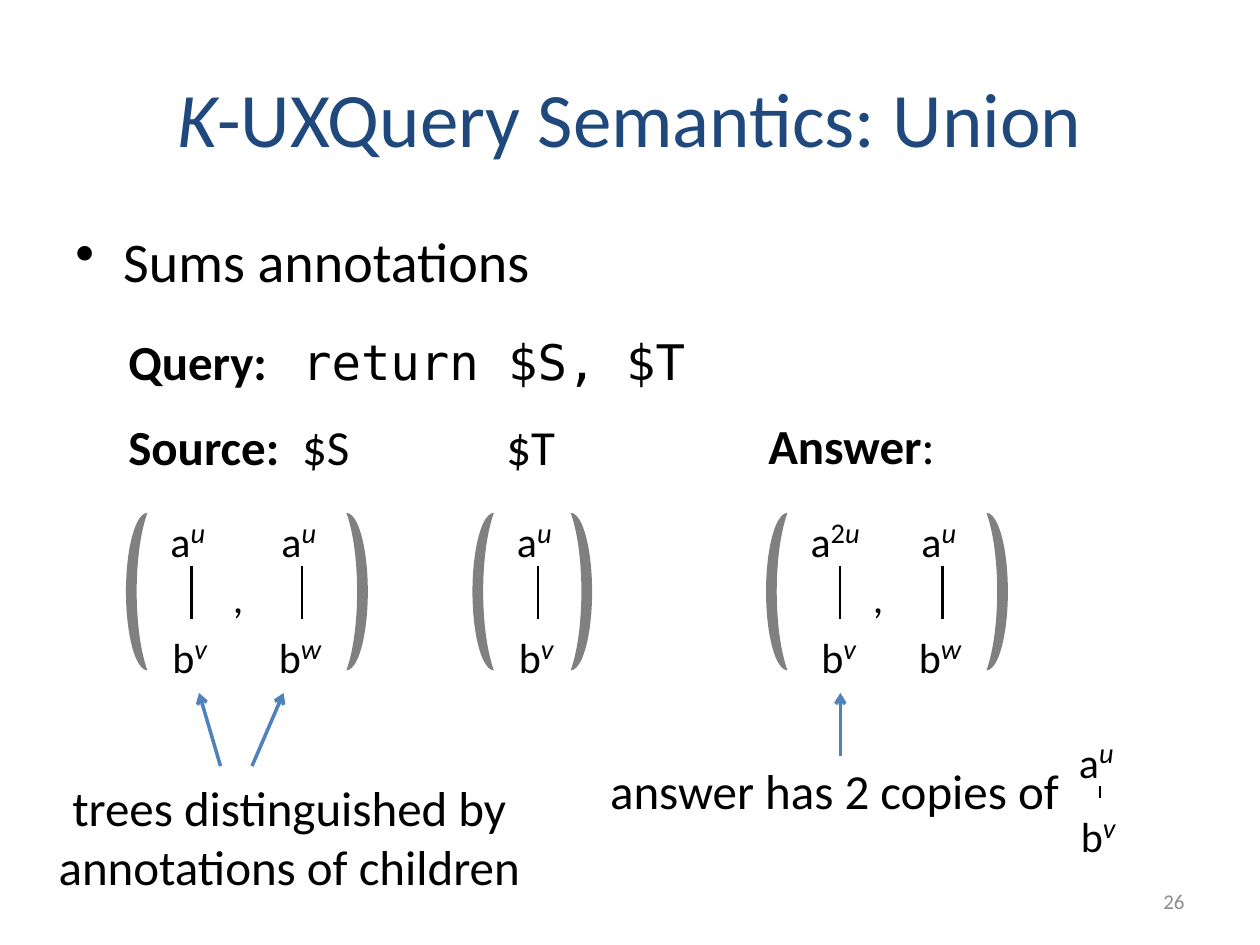
import pptx
import pptx.dml.color
import pptx.enum.shapes
import pptx.enum.text
import pptx.oxml
import pptx.util
from pptx.oxml.ns import qn
from pptx.util import Inches, Pt

RGBColor = pptx.dml.color.RGBColor
ALIGN = pptx.enum.text.PP_ALIGN
ANCHOR = pptx.enum.text.MSO_ANCHOR
SHAPE = pptx.enum.shapes.MSO_SHAPE
STRAIGHT = pptx.enum.shapes.MSO_CONNECTOR.STRAIGHT

BLACK = RGBColor(0x00, 0x00, 0x00)
NAVY = RGBColor(0x1F, 0x49, 0x7D)
BLUE = RGBColor(0x4F, 0x81, 0xBD)
GRAY = RGBColor(0x80, 0x80, 0x80)
PALE = RGBColor(0x8C, 0x8C, 0x8C)
SANS, MONO = "Calibri", "DejaVu Sans Mono"
ITALIC, BOLD = {"italic": True}, {"bold": True}

# Content: position, spans of (text, font settings), paragraph settings
TITLE = ((0.5, 0.3, 9, 1.25), [("K", ITALIC), ("-UXQuery Semantics: Union", {})],
         dict(size=44, color=NAVY, align=ALIGN.CENTER, anchor=ANCHOR.MIDDLE))
BULLET = ((0.5, 1.75, 9, 4.95), [("Sums annotations", {})], dict(size=32))
TEXTS = [
    ((7.17, 6.95, 2.33, 0.4), [("26", {})],
     dict(size=12, color=PALE, align=ALIGN.RIGHT, anchor=ANCHOR.MIDDLE)),
    ((6, 3.25, 1.67, 0.57), [("Answer", BOLD), (":", {})], {}),
    ((4.25, 5.99, 4.25, 0.57), [("answer has 2 copies of", {})], dict(align=ALIGN.RIGHT)),
    ((0.17, 6.12, 4.25, 1.04), [("trees distinguished by annotations of children", {})],
     dict(align=ALIGN.CENTER)),
]
TABBED = [
    ((0.92, 2.58, 7.67, 0.57), [("Query:", BOLD), ("\treturn $S, $T", {"name": MONO})], {}),
    ((0.92, 3.26, 5, 0.57), [("Source:", BOLD), ("\t$S\t$T", {})], {}),
]
TAB_STOPS = (1.38, 3)

# Each forest: trees of (centre, root annotation, leaf annotation),
# left edges of the two parentheses, left edge of the comma
FORESTS = [
    ([(1.52, "u", "v"), (2.4, "u", "w")], (1, 2.75), 1.75),
    ([(4.27, "u", "v")], (3.75, 4.53), None),
    ([(6.67, "2u", "v"), (7.48, "u", "w")], (6.08, 7.83), 6.83),
]
COPIED_TREE = (8.73, "u", "v")
LABEL_WIDTHS = {"u": 0.53, "2u": 0.67, "v": 0.5, "w": 0.57}
LABEL_HEIGHT = 0.5
ROOT_TOP, LEAF_TOP = 3.99, 4.91

ARROWS = [((6.67, 6), (6.67, 5.5)), ((2, 6.08), (2.25, 5.5)), ((1.75, 6.08), (1.58, 5.5))]


def add_text(shapes, place, spans, size=28, color=BLACK, align=ALIGN.LEFT,
             anchor=ANCHOR.TOP, wrap=True):
    box = shapes.add_textbox(*map(Inches, place))
    box.text_frame.word_wrap = wrap
    box.text_frame.vertical_anchor = anchor
    para = box.text_frame.paragraphs[0]
    para.alignment = align
    para.font.name, para.font.size = SANS, Pt(size)
    para.font.color.rgb = color
    for text, settings in spans:
        span = para.add_run()
        span.text = text
        for key, value in settings.items():
            setattr(span.font, key, value)
    return para


def add_line(shapes, start, end, color=BLACK, width=1.25):
    line = shapes.add_connector(STRAIGHT, *map(Inches, start + end))
    line.line.color.rgb = color
    line.line.width = Pt(width)
    properties = line._element.spPr
    properties.append(properties.makeelement(qn("a:effectLst"), {}))
    return line


def add_label(shapes, centre, top, letter, annotation):
    width = LABEL_WIDTHS[annotation]
    para = add_text(shapes, (centre - width / 2, top, width, LABEL_HEIGHT),
                    [(letter, {})], size=24, wrap=False)
    for character in annotation:
        span = para.add_run()
        span.text = character
        span.font.size = Pt(28)
        span.font.italic = character.isalpha()
        span.font._element.set("baseline", "30000")


def add_tree(shapes, centre, root, leaf, root_top=ROOT_TOP, leaf_top=LEAF_TOP):
    add_label(shapes, centre, root_top, "a", root)
    add_label(shapes, centre, leaf_top, "b", leaf)
    add_line(shapes, (centre, root_top + LABEL_HEIGHT), (centre, leaf_top))


def add_parenthesis(shapes, left, closing):
    moon = shapes.add_shape(SHAPE.MOON, *map(Inches, (left, 4.07, 0.17, 1.25)))
    moon.shadow.inherit = False
    moon.fill.solid()
    moon.fill.fore_color.rgb = GRAY
    moon.line.fill.background()
    if closing:
        moon._element.spPr.xfrm.set("flipH", "1")


deck = pptx.Presentation()
deck.slide_width, deck.slide_height = Inches(10), Inches(7.5)
page = deck.slides.add_slide(deck.slide_layouts[6])

# Title, bullet and plain texts
for place, spans, settings in [TITLE] + TEXTS:
    add_text(page.shapes, place, spans, **settings)

place, spans, settings = BULLET
para = add_text(page.shapes, place, spans, **settings)
para.space_before = Pt(6.4)
layout = para._p.get_or_add_pPr()
layout.set("marL", str(Inches(0.38)))
layout.set("indent", str(-Inches(0.38)))
mark = layout.makeelement(qn("a:buChar"), {"char": "•"})
layout.find(qn("a:defRPr")).addprevious(mark)

# Query and source lines share their tab stops
for place, spans, settings in TABBED:
    layout = add_text(page.shapes, place, spans, **settings)._p.get_or_add_pPr()
    stops = layout.makeelement(qn("a:tabLst"), {})
    for stop in TAB_STOPS:
        stops.append(stops.makeelement(qn("a:tab"), {"pos": str(Inches(stop)), "algn": "l"}))
    layout.find(qn("a:defRPr")).addprevious(stops)

# Forests in parentheses
for trees, edges, comma in FORESTS:
    group = page.shapes.add_group_shape()
    for tree in trees:
        add_tree(group.shapes, *tree)
    for left, closing in zip(edges, (False, True)):
        add_parenthesis(group.shapes, left, closing)
    if comma:
        add_text(group.shapes, (comma, 4.49, 0.29, 0.5), [(",", {})], size=24, wrap=False)

# Small tree beside the answer note
group = page.shapes.add_group_shape()
add_tree(group.shapes, *COPIED_TREE, root_top=5.74, leaf_top=6.33)

# Arrows from the notes to the trees
for start, end in ARROWS:
    arrow = add_line(page.shapes, start, end, BLUE, 2)
    outline = arrow.line._get_or_add_ln()
    outline.append(outline.makeelement(qn("a:tailEnd"), {"type": "arrow"}))

deck.save("out.pptx")
